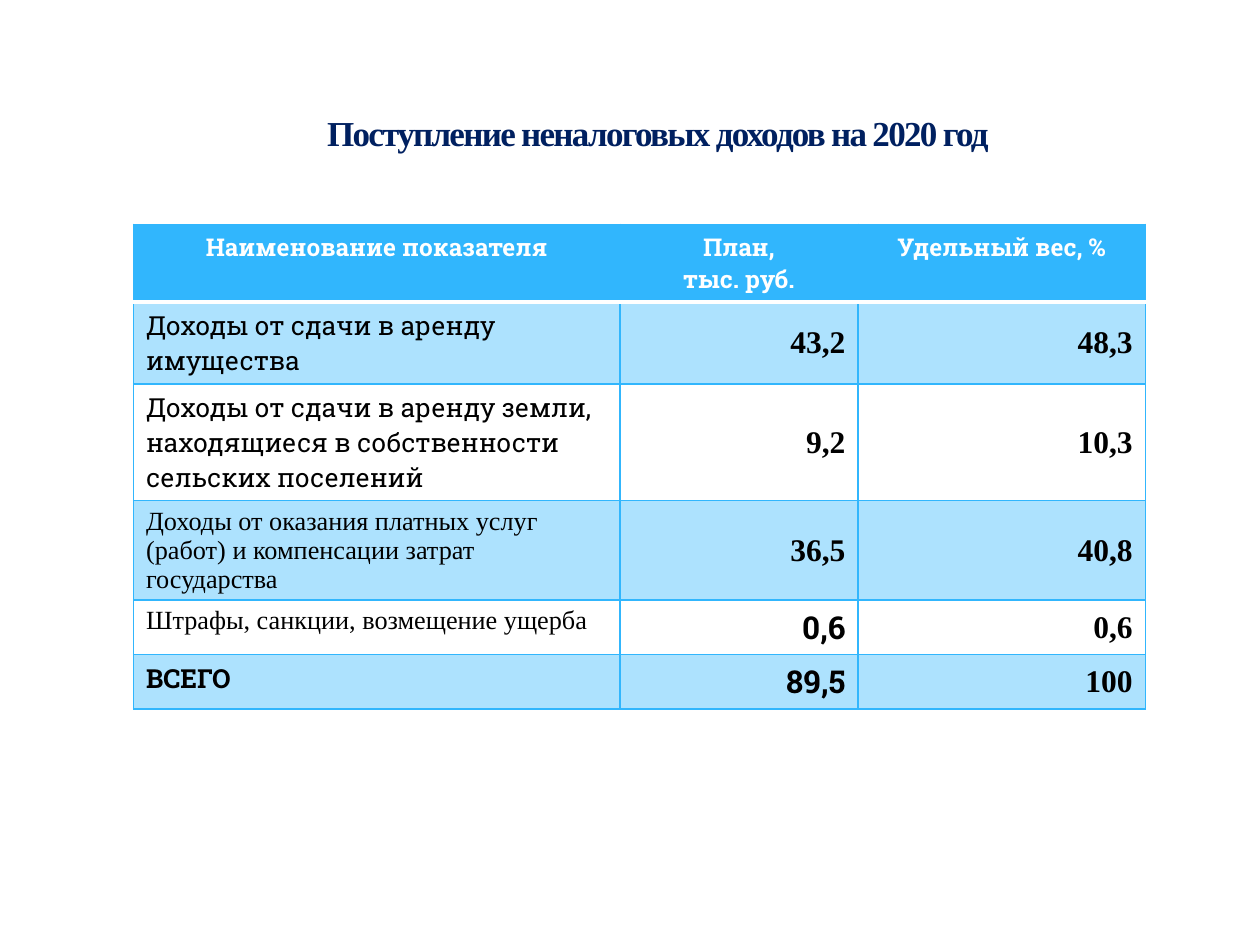
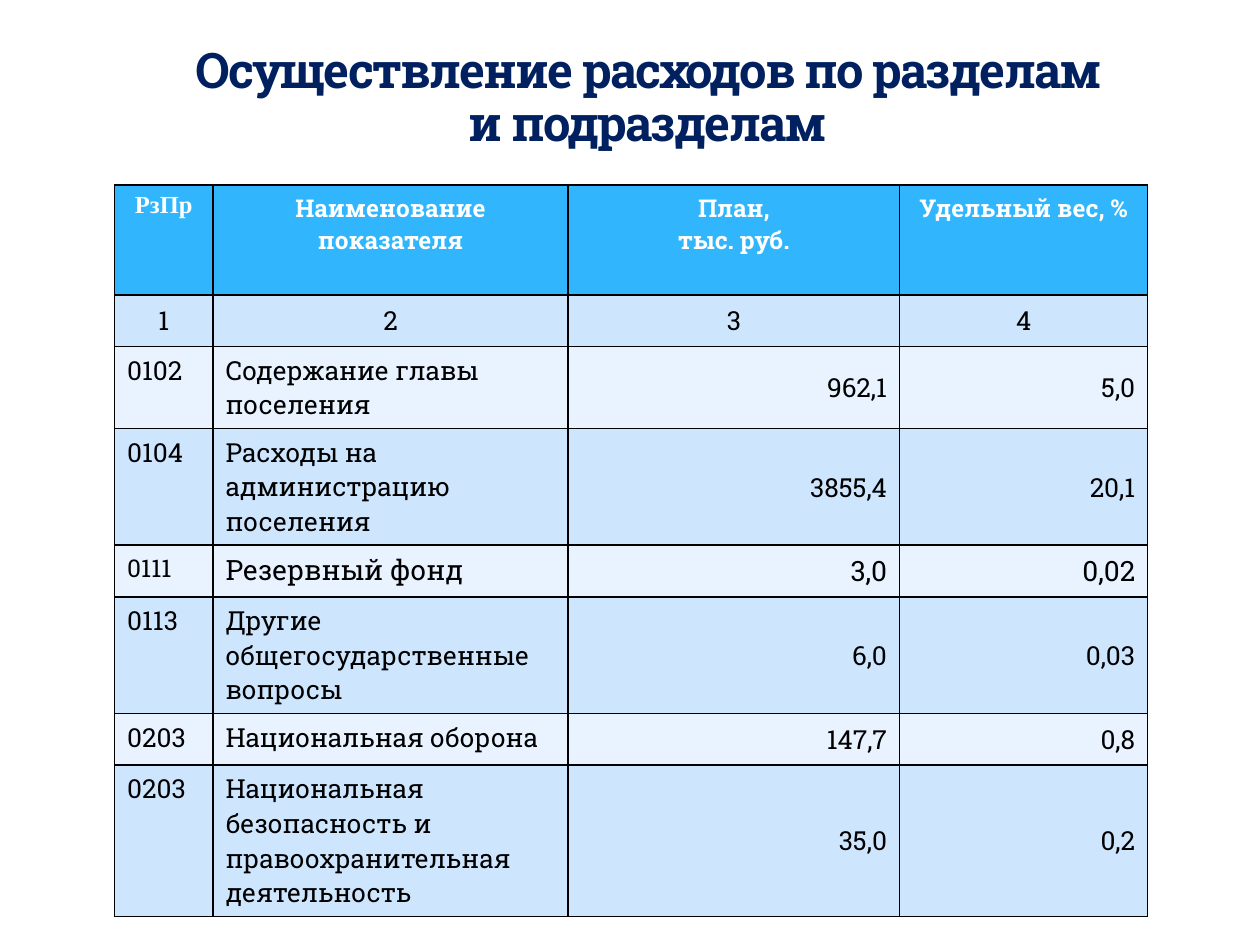
from pptx import Presentation
from pptx.dml.color import RGBColor
from pptx.enum.text import MSO_ANCHOR, MSO_AUTO_SIZE, PP_ALIGN
from pptx.oxml.ns import qn
from pptx.util import Inches, Pt
from lxml import etree

LEFT, CENTER, RIGHT = PP_ALIGN.LEFT, PP_ALIGN.CENTER, PP_ALIGN.RIGHT
TOP, MIDDLE, BOTTOM = MSO_ANCHOR.TOP, MSO_ANCHOR.MIDDLE, MSO_ANCHOR.BOTTOM
NO_AUTOFIT = MSO_AUTO_SIZE.NONE
TITLE_ONLY = 5

SLAB, TIMES = "Roboto Slab", "Times New Roman"
NAVY, SKY, PALE_SKY = "002060", "31B6FD", "ADE2FE"
BAND_DARK, BAND_LIGHT = "CEE5FE", "E8F3FF"
WHITE, BLACK = "FFFFFF", "000000"
ROW_HEIGHT = 0.41

HEADINGS = ["Наименование показателя", "План,\nтыс. руб.", "Удельный вес, %"]

INCOME_TITLE = "Поступление неналоговых доходов на 2020 год"
INCOME_ROWS = [
    ("Доходы от сдачи в аренду имущества", "43,2", "48,3"),
    ("Доходы от сдачи в аренду земли, находящиеся в собственности сельских поселений", "9,2", "10,3"),
    ("Доходы от оказания платных услуг (работ) и компенсации затрат государства", "36,5", "40,8"),
    ("Штрафы, санкции, возмещение ущерба", "0,6", "0,6"),
    ("ВСЕГО", "89,5", "100"),
]
INCOME_LABEL_FONTS = [SLAB, SLAB, TIMES, TIMES, SLAB]
INCOME_PLAN_FONTS = [TIMES, TIMES, TIMES, SLAB, SLAB]

EXPENSE_TITLE = "Осуществление расходов по разделам и подразделам"
EXPENSE_ROWS = [
    ("1", "2", "3", "4"),
    ("0102", "Содержание главы поселения", "962,1", "5,0"),
    ("0104", "Расходы на администрацию поселения", "3855,4", "20,1"),
    ("0111", "Резервный фонд", "3,0", "0,02"),
    ("0113", "Другие общегосударственные вопросы", "6,0", "0,03"),
    ("0203", "Национальная оборона", "147,7", "0,8"),
    ("0203", "Национальная безопасность и правоохранительная деятельность", "35,0", "0,2"),
]
RESERVE_FUND_SIZES = [14, 16, 16, 16]


def color(value):
    return RGBColor.from_string(value)


def write_text(frame, text, font=SLAB, size=15, ink=BLACK, bold=False, align=LEFT, spacing=None):
    frame.text = text
    for paragraph in frame.paragraphs:
        paragraph.alignment = align
        paragraph.line_spacing = spacing
        for run in paragraph.runs:
            run.font.name = font
            run.font.size = Pt(size)
            run.font.bold = bold
            run.font.color.rgb = color(ink)


def set_border(cell, side, ink, width):
    line = etree.Element(qn(f"a:ln{side}"), w=str(Pt(width)))
    fill = etree.SubElement(line, qn("a:solidFill"))
    etree.SubElement(fill, qn("a:srgbClr"), val=ink)
    return line


def fill_cell(cell, text, fill=None, anchor=TOP, borders=None, **text_format):
    write_text(cell.text_frame, text, **text_format)
    cell.vertical_anchor = anchor
    if fill:
        cell.fill.solid()
        cell.fill.fore_color.rgb = color(fill)
    else:
        cell.fill.background()
    properties = cell._tc.get_or_add_tcPr()
    for position, side in enumerate("LRTB"):
        properties.insert(position, set_border(cell, side, *borders[side]))


def add_titled_slide(presentation, title, box, anchor, **text_format):
    slide = presentation.slides.add_slide(presentation.slide_layouts[TITLE_ONLY])
    shape = slide.shapes.title
    shape.left, shape.top, shape.width, shape.height = map(Inches, box)
    frame = shape.text_frame
    write_text(frame, title, ink=NAVY, bold=True, align=CENTER, **text_format)
    frame.word_wrap = True
    frame.auto_size = NO_AUTOFIT
    frame.vertical_anchor = anchor
    for run in frame.paragraphs[0].runs:
        run.font._element.set("spc", "-100")
    return slide


def add_plain_table(slide, left, top, column_widths, row_heights):
    table = slide.shapes.add_table(
        len(row_heights), len(column_widths), Inches(left), Inches(top),
        Inches(sum(column_widths)), Inches(sum(row_heights))).table
    table.first_row = table.horz_banding = False
    for column, width in zip(table.columns, column_widths):
        column.width = Inches(width)
    for row, height in zip(table.rows, row_heights):
        row.height = Inches(height)
    return table


def add_headings(table, headings, borders):
    for index, heading in enumerate(headings):
        font = TIMES if heading == "РзПр" else SLAB
        fill_cell(table.cell(0, index), heading, fill=SKY, borders=borders,
                  font=font, size=14, ink=WHITE, bold=True, align=CENTER)


def add_income_slide(presentation):
    slide = add_titled_slide(presentation, INCOME_TITLE, (1.38, 0.68, 7.68, 0.74), MIDDLE,
                             font=TIMES, size=20)
    table = add_plain_table(slide, 1.06, 1.78, [3.86, 1.89, 2.28],
                            [ROW_HEIGHT] * (len(INCOME_ROWS) + 1))
    borders = dict.fromkeys("LRTB", (SKY, 1))
    divider = (WHITE, 3)
    add_headings(table, HEADINGS, {**borders, "B": divider})
    for number, (label, *values) in enumerate(INCOME_ROWS, 1):
        shared = {"fill": PALE_SKY if number % 2 else None,
                  "borders": {**borders, "T": divider} if number == 1 else borders}
        fill_cell(table.cell(number, 0), label, font=INCOME_LABEL_FONTS[number - 1],
                  bold=label == "ВСЕГО", **shared)
        value_fonts = [INCOME_PLAN_FONTS[number - 1], TIMES]
        for index, (value, font) in enumerate(zip(values, value_fonts), 1):
            fill_cell(table.cell(number, index), value, anchor=MIDDLE, font=font,
                      size=18, bold=True, align=RIGHT, **shared)


def add_expense_slide(presentation):
    slide = add_titled_slide(presentation, EXPENSE_TITLE, (1.3, 0.76, 7.68, 0.5), BOTTOM,
                             font=SLAB, size=28, spacing=0.9)
    table = add_plain_table(slide, 0.91, 1.47, [0.78, 2.82, 2.63, 1.97],
                            [0.87] + [ROW_HEIGHT] * len(EXPENSE_ROWS))
    borders = dict.fromkeys("LRTB", (BLACK, 1))
    add_headings(table, ["РзПр"] + HEADINGS, borders)
    for number, row in enumerate(EXPENSE_ROWS, 1):
        sizes = RESERVE_FUND_SIZES if row[0] == "0111" else [15] * len(row)
        for index, (text, size) in enumerate(zip(row, sizes)):
            is_value = index >= 2
            align = CENTER if number == 1 else RIGHT if is_value else LEFT
            fill_cell(table.cell(number, index), text, size=size, align=align,
                      anchor=MIDDLE if number == 1 or is_value else TOP,
                      fill=BAND_DARK if number % 2 else BAND_LIGHT, borders=borders)


def main():
    presentation = Presentation()
    presentation.slide_width, presentation.slide_height = Inches(10), Inches(7.5)
    add_income_slide(presentation)
    add_expense_slide(presentation)
    presentation.save("out.pptx")


if __name__ == "__main__":
    main()
